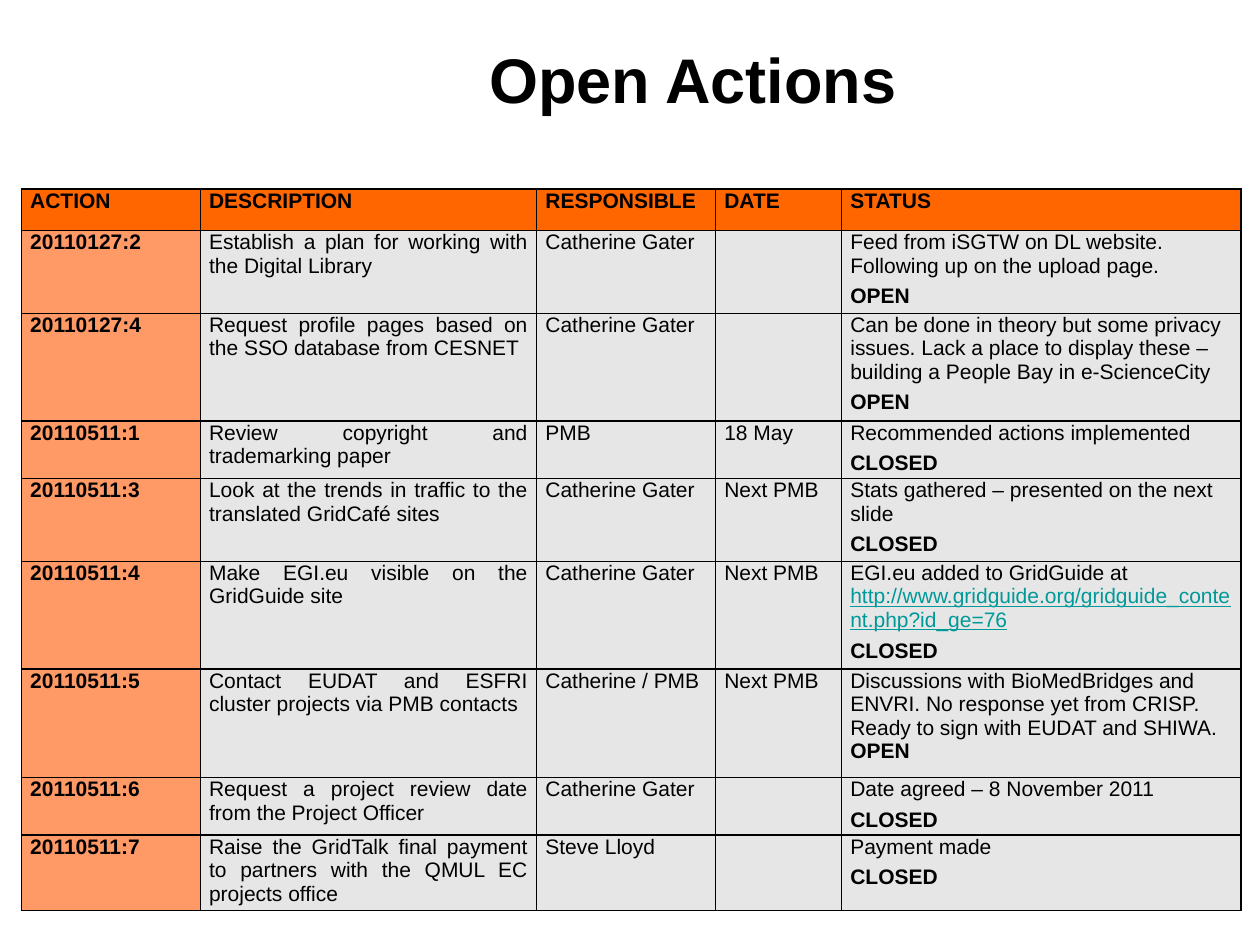
"""Build the Open Actions slide with its table of actions."""
from dataclasses import dataclass
from typing import NamedTuple

from lxml import etree
from pptx import Presentation
from pptx.dml.color import RGBColor
from pptx.enum import text
from pptx.oxml.ns import qn
from pptx.util import Inches, Pt


@dataclass(frozen=True)
class Theme:
    font: str = "Arial"
    title_size: float = 36
    body_size: float = 12
    gap: float = 2
    border_width: float = 1
    ink: str = "000000"
    link: str = "009999"
    header: str = "FF6600"
    key: str = "FF9966"
    body: str = "E6E6E6"


class Span(NamedTuple):
    text: str
    bold: bool = False
    link: bool = False


class Action(NamedTuple):
    number: str
    description: str
    responsible: str
    date: str
    status: list[list[Span]]
    height: float


THEME = Theme()
OPEN = Span("OPEN", bold=True)
CLOSED = Span("CLOSED", bold=True)
HEADINGS = ("ACTION", "DESCRIPTION", "RESPONSIBLE", "DATE", "STATUS")
HEADER_HEIGHT = 0.33
COLUMN_WIDTHS = (1.42, 2.67, 1.42, 1, 3.17)
JUSTIFIED_COLUMNS = (0, 1)
ACTIONS = (
    Action("20110127:2", "Establish a plan for working with the Digital Library",
           "Catherine Gater", "",
           [[Span("Feed from iSGTW on DL website. Following up on the upload page.")],
            [OPEN]], 0.52),
    Action("20110127:4", "Request profile pages based on the SSO database from CESNET",
           "Catherine Gater", "",
           [[Span("Can be done in theory but some privacy issues. Lack a place to "
                  "display these – building a People Bay in e-ScienceCity")],
            [OPEN]], 0.84),
    Action("20110511:1", "Review copyright and trademarking paper", "PMB", "18 May",
           [[Span("Recommended actions implemented")], [CLOSED]], 0.45),
    Action("20110511:3", "Look at the trends in traffic to the translated GridCafé sites",
           "Catherine Gater", "Next PMB",
           [[Span("Stats gathered – presented on the next slide")], [CLOSED]], 0.45),
    Action("20110511:4", "Make EGI.eu visible on the GridGuide site",
           "Catherine Gater", "Next PMB",
           [[Span("EGI.eu added to GridGuide at "),
             Span("http://www.gridguide.org/gridguide_content.php?id_ge=76", link=True)],
            [CLOSED]], 0.84),
    Action("20110511:5", "Contact EUDAT and ESFRI cluster projects via PMB contacts",
           "Catherine / PMB", "Next PMB",
           [[Span("Discussions with BioMedBridges and ENVRI. No response yet from "
                  "CRISP. Ready to sign with EUDAT and SHIWA. "), OPEN]], 0.86),
    Action("20110511:6", "Request a project review date from the Project Officer",
           "Catherine Gater", "",
           [[Span("Date agreed – 8 November 2011")], [CLOSED]], 0.45),
    Action("20110511:7",
           "Raise the GridTalk final payment to partners with the QMUL EC projects office",
           "Steve Lloyd", "", [[Span("Payment made")], [CLOSED]], 0.59),
)


def apply_format(target, values: dict) -> None:
    for name, value in values.items():
        setattr(target, name, value)


def add_span(paragraph, span: Span, size: float) -> None:
    run = paragraph.add_run()
    run.text = span.text
    apply_format(run.font, {"name": THEME.font, "size": Pt(size),
                            "bold": span.bold, "underline": span.link})
    run.font.color.rgb = RGBColor.from_string(THEME.link if span.link else THEME.ink)


def add_borders(cell) -> None:
    properties = cell._tc.get_or_add_tcPr()
    for side in ("a:lnL", "a:lnR", "a:lnT", "a:lnB"):
        line = etree.SubElement(properties, qn(side), w=str(Pt(THEME.border_width)))
        fill = etree.SubElement(line, qn("a:solidFill"))
        etree.SubElement(fill, qn("a:srgbClr"), val=THEME.ink)


def fill_cell(cell, paragraphs: list[list[Span]], color: str, justified: bool) -> None:
    add_borders(cell)
    apply_format(cell, {"margin_left": Inches(0.07), "margin_right": Inches(0.07),
                        "margin_top": 0, "margin_bottom": 0,
                        "vertical_anchor": text.MSO_ANCHOR.TOP})
    cell.fill.solid()
    cell.fill.fore_color.rgb = RGBColor.from_string(color)
    frame = cell.text_frame
    for index, spans in enumerate(paragraphs):
        paragraph = frame.add_paragraph() if index else frame.paragraphs[0]
        apply_format(paragraph, {
            "alignment": text.PP_ALIGN.JUSTIFY if justified else text.PP_ALIGN.LEFT,
            "space_before": Pt(THEME.gap if index else 0),
            "space_after": Pt(THEME.gap)})
        paragraph.font.size = Pt(THEME.body_size)
        for span in spans:
            add_span(paragraph, span, THEME.body_size)


def add_title(slide, title: str) -> None:
    box = slide.shapes.add_textbox(Inches(1), Inches(0), Inches(9), Inches(1.25))
    frame = box.text_frame
    apply_format(frame, {"word_wrap": True, "vertical_anchor": text.MSO_ANCHOR.MIDDLE})
    paragraph = frame.paragraphs[0]
    paragraph.alignment = text.PP_ALIGN.CENTER
    add_span(paragraph, Span(title, bold=True), THEME.title_size)


def add_action_table(slide) -> None:
    shape = slide.shapes.add_table(len(ACTIONS) + 1, len(HEADINGS), Inches(0.17),
                                   Inches(1.5), Inches(9.67), Inches(5.72))
    table = shape.table
    apply_format(table, {"first_row": False, "horz_banding": False})
    for column, width in zip(table.columns, COLUMN_WIDTHS):
        column.width = Inches(width)
    heights = [HEADER_HEIGHT] + [action.height for action in ACTIONS]
    for row, height in zip(table.rows, heights):
        row.height = Inches(height)
    rows = [[[[Span(heading, bold=True)]] for heading in HEADINGS]]
    for action in ACTIONS:
        plain = (action.description, action.responsible, action.date)
        rows.append([[[Span(action.number, bold=True)]],
                     *([[Span(value)]] if value else [[]] for value in plain),
                     action.status])
    for row_index, row in enumerate(rows):
        for column_index, paragraphs in enumerate(row):
            body = THEME.body if column_index else THEME.key
            fill_cell(table.cell(row_index, column_index), paragraphs,
                      body if row_index else THEME.header,
                      column_index in JUSTIFIED_COLUMNS)


def main() -> None:
    presentation = Presentation()
    apply_format(presentation, {"slide_width": Inches(10), "slide_height": Inches(7.5)})
    slide = presentation.slides.add_slide(presentation.slide_layouts[6])
    add_title(slide, "Open Actions")
    add_action_table(slide)
    presentation.save("out.pptx")


if __name__ == "__main__":
    main()
